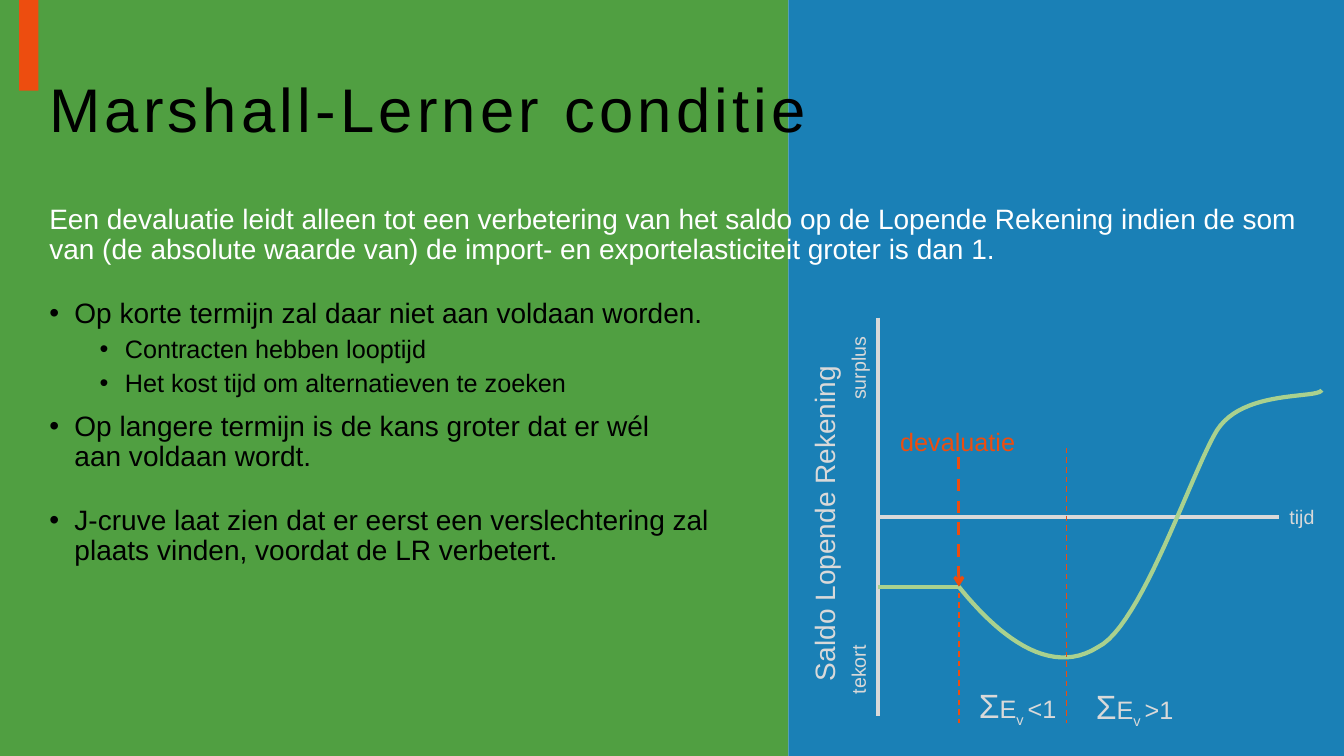
from lxml import etree
from pptx import Presentation
from pptx import util as u
from pptx.dml.color import RGBColor
from pptx.enum import dml, shapes, text
from pptx.oxml.ns import qn

COLOURS = {
    "green": "258812", "blue": "1A80B6", "orange": "ED4D0F", "black": "000000",
    "white": "FFFFFF", "grey": "D9D9D9", "curve": "A9D18E",
}
FONT = "Arial"

# left, top, width, height, colour, opacity in percent
PANELS = [
    (0, 0, 7.82, 7.5, "green", 80),
    (7.82, 0, 5.51, 7.5, "blue", 100),
    (0.19, 0, 0.19, 0.9, "orange", 100),
]

TITLE = "Marshall-Lerner conditie"
# text, size, colour, bullet indent (None: no bullet), space before
BODY = [
    ("Een devaluatie leidt alleen tot een verbetering van het saldo op de Lopende "
     "Rekening indien de som van (de absolute waarde van) de import- en "
     "exportelasticiteit groter is dan 1.", 20, "white", None, 10),
    ("Op korte termijn zal daar niet aan voldaan worden.", 20, "black", 0.25, 24),
    ("Contracten hebben looptijd", 18, "black", 0.75, 5),
    ("Het kost tijd om alternatieven te zoeken", 18, "black", 0.75, 5),
    ("Op langere termijn is de kans groter dat er wél\vaan voldaan wordt.",
     20, "black", 0.25, 10),
    ("J-cruve laat zien dat er eerst een verslechtering zal\v"
     "plaats vinden, voordat de LR verbetert.", 20, "black", 0.25, 24),
]

AXIS_X, AXIS_Y = 8.71, 5.13
START_X, START_Y = 9.51, 5.82
TURN_X, GUIDE_END = 10.58, 7.17

# start, end, colour, width, dashed, arrow
AXES = [
    ((AXIS_X, 3.15), (AXIS_X, 7.1), "grey", 3, False, False),
    ((AXIS_X, AXIS_Y), (12.69, AXIS_Y), "grey", 3, False, False),
]
MARKERS = [
    ((START_X, START_Y), (AXIS_X, START_Y), "curve", 3, False, False),
    ((START_X, 4.53), (START_X, START_Y), "orange", 2.25, True, True),
    ((START_X, 5.88), (START_X, GUIDE_END), "orange", 1, True, False),
    ((TURN_X, 4.44), (TURN_X, GUIDE_END), "orange", 1, True, False),
]
# each segment: two control points and an end point
J_CURVE = [
    ((9.88, 6.28), (10.4, 6.73), (10.89, 6.42)),
    ((11.32, 6.21), (11.82, 4.68), (12.07, 4.27)),
    ((12.33, 3.86), (13.07, 3.96), (13.11, 3.87)),
]
CURVE_STEPS = 24

# text, left, top, width, height, size, colour, rotation
LABELS = [
    ("surplus", 8.1, 3.48, 0.83, 0.34, 14, "grey", 270),
    ("tekort", 8.17, 6.47, 0.69, 0.34, 14, "grey", 270),
    ("tijd", 12.69, 4.96, 0.45, 0.34, 14, "grey", 0),
    ("devaluatie", 8.83, 4.18, 1.35, 0.4, 18, "orange", 0),
    ("Saldo Lopende Rekening", 6.5, 4.96, 3.35, 0.44, 20, "grey", 270),
]
# left, top, comparison
CONDITIONS = [(9.61, 6.75, "<1"), (10.77, 6.76, ">1")]


def rgb(name):
    return RGBColor.from_string(COLOURS[name])


def style(font, size, colour):
    font.name, font.size = FONT, u.Pt(size)
    font.color.rgb = rgb(colour)


def add_panel(page, left, top, width, height, colour, opacity):
    panel = page.shapes.add_shape(
        shapes.MSO_SHAPE.RECTANGLE, *map(u.Inches, (left, top, width, height)))
    panel.shadow.inherit = False
    panel.line.fill.background()
    panel.fill.solid()
    panel.fill.fore_color.rgb = rgb(colour)
    if opacity < 100:
        tint = panel.fill._xPr.find(".//" + qn("a:srgbClr"))
        etree.SubElement(tint, qn("a:alpha"), val=str(opacity * 1000))


def add_box(page, left, top, width, height, wrap=False):
    box = page.shapes.add_textbox(*map(u.Inches, (left, top, width, height)))
    box.text_frame.word_wrap = wrap
    if not wrap:
        box.text_frame.auto_size = text.MSO_AUTO_SIZE.SHAPE_TO_FIT_TEXT
    return box


def add_title(page):
    frame = add_box(page, 0.39, 0.39, 12.61, 1.45, wrap=True).text_frame
    frame.vertical_anchor = text.MSO_ANCHOR.MIDDLE
    para = frame.paragraphs[0]
    para.line_spacing = 0.9
    para.text = TITLE
    style(para.font, 44, "black")
    para.runs[0].font._element.set("spc", "300")


def add_body(page):
    frame = add_box(page, 0.39, 1.99, 12.61, 4.76, wrap=True).text_frame
    for index, (words, size, colour, indent, before) in enumerate(BODY):
        para = frame.add_paragraph() if index else frame.paragraphs[0]
        para.text = words
        para.line_spacing, para.space_before = 0.9, u.Pt(before)
        if indent:
            para.level = int(indent > 0.5)
            props = para._p.get_or_add_pPr()
            props.set("marL", str(u.Inches(indent)))
            props.set("indent", str(u.Inches(-0.25)))
            etree.SubElement(props, qn("a:buFont"), typeface=FONT)
            etree.SubElement(props, qn("a:buChar"), char="•")
        style(para.font, size, colour)


def add_line(page, start, end, colour, width, dashed, arrow):
    line = page.shapes.add_connector(
        shapes.MSO_CONNECTOR.STRAIGHT, *map(u.Inches, start + end))
    line.line.color.rgb = rgb(colour)
    line.line.width = u.Pt(width)
    if dashed:
        line.line.dash_style = dml.MSO_LINE.DASH
    if arrow:
        etree.SubElement(line.line._get_or_add_ln(), qn("a:tailEnd"), type="arrow")
    etree.SubElement(line._element.spPr, qn("a:effectLst"))


def curve_points():
    """Sample the cubic segments of the J-curve."""
    start, points = (START_X, START_Y), []
    for first, second, end in J_CURVE:
        for step in range(1, CURVE_STEPS + 1):
            t = step / CURVE_STEPS
            weights = ((1 - t) ** 3, 3 * t * (1 - t) ** 2, 3 * t * t * (1 - t), t ** 3)
            knots = (start, first, second, end)
            points.append(tuple(
                u.Inches(sum(w * knot[axis] for w, knot in zip(weights, knots)))
                for axis in (0, 1)))
        start = end
    return points


def add_curve(page):
    builder = page.shapes.build_freeform(u.Inches(START_X), u.Inches(START_Y))
    builder.add_line_segments(curve_points(), close=False)
    curve = builder.convert_to_shape()
    curve.shadow.inherit = False
    curve.fill.background()
    curve.line.color.rgb = rgb("curve")
    curve.line.width = u.Pt(3)


def add_label(page, words, left, top, width, height, size, colour, rotation):
    box = add_box(page, left, top, width, height)
    box.rotation = rotation
    para = box.text_frame.paragraphs[0]
    para.text = words
    style(para.font, size, colour)


def add_condition(page, left, top, comparison):
    para = add_box(page, left, top, 1, 0.5).text_frame.paragraphs[0]
    for words, size, baseline in (
            ("Σ", 24, 0), ("E", 18, 0), ("v ", 18, -25), (comparison, 18, 0)):
        span = para.add_run()
        span.text = words
        style(span.font, size, "grey")
        if baseline:
            span.font._element.set("baseline", str(baseline * 1000))


def main():
    deck = Presentation()
    deck.slide_width, deck.slide_height = u.Inches(13.33), u.Inches(7.5)
    page = deck.slides.add_slide(deck.slide_layouts[6])
    for panel in PANELS:
        add_panel(page, *panel)
    add_title(page)
    add_body(page)
    for axis in AXES:
        add_line(page, *axis)
    add_curve(page)
    for marker in MARKERS:
        add_line(page, *marker)
    for label in LABELS:
        add_label(page, *label)
    for condition in CONDITIONS:
        add_condition(page, *condition)
    deck.save("out.pptx")


if __name__ == "__main__":
    main()
